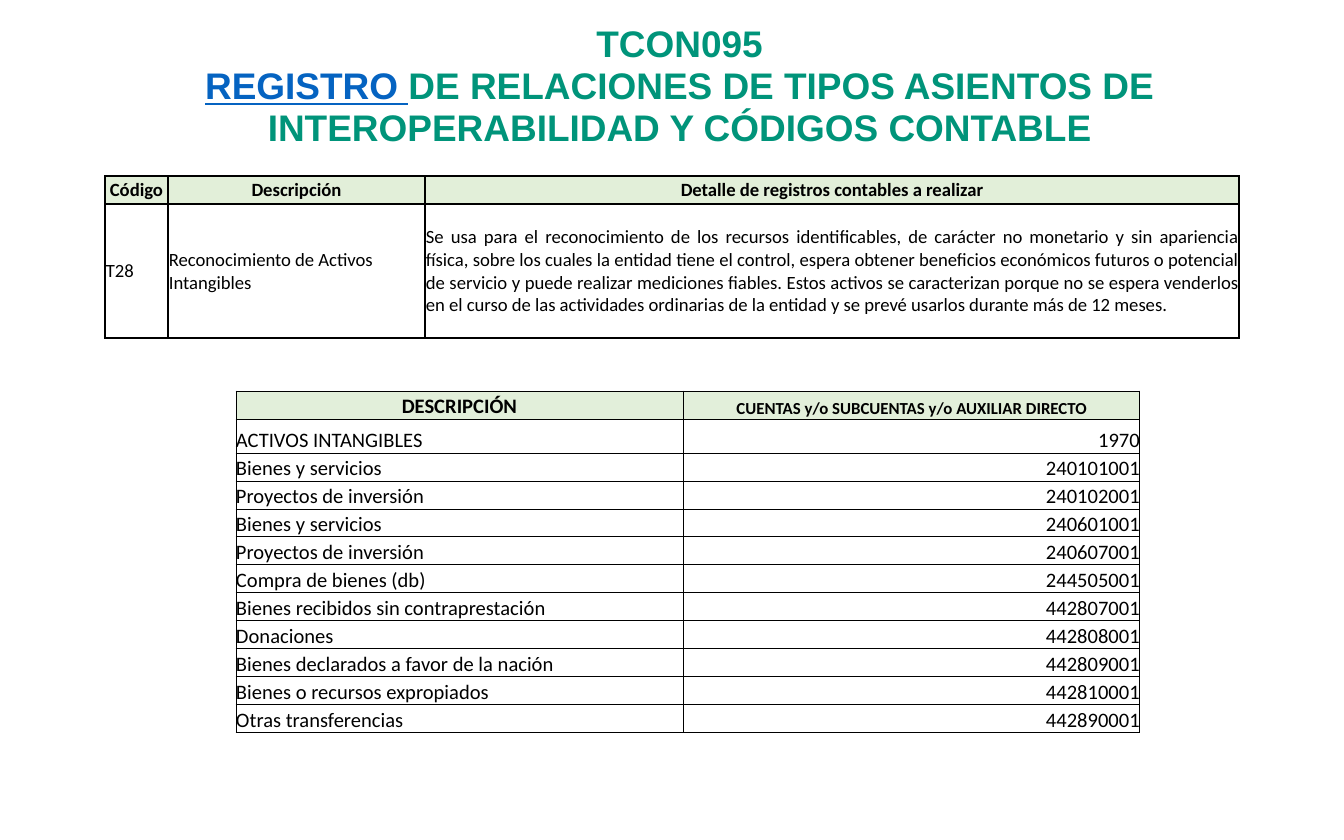
from dataclasses import dataclass

from lxml import etree
from pptx import Presentation
from pptx.dml.color import RGBColor
from pptx.enum.text import MSO_ANCHOR, PP_ALIGN
from pptx.oxml.ns import qn
from pptx.util import Emu, Pt

PX = 914400 / 134.4
LEFT, CENTER, RIGHT, JUSTIFY = PP_ALIGN.LEFT, PP_ALIGN.CENTER, PP_ALIGN.RIGHT, PP_ALIGN.JUSTIFY
MIDDLE, BOTTOM = MSO_ANCHOR.MIDDLE, MSO_ANCHOR.BOTTOM
GREEN, LINK, BLACK = "00947A", "0563C1", "000000"


@dataclass(frozen=True)
class TableSpec:
    left: int
    top: int
    cols: list[int]
    rows: list[int]
    cells: list[tuple[str, ...]]
    aligns: list[PP_ALIGN]
    header_sizes: list[int]
    body_size: int
    header_fill: str
    anchor: MSO_ANCHOR
    inset: int
    border: float


ENTRY_TYPES = TableSpec(
    left=105, top=176, cols=[63, 257, 814], rows=[28, 134],
    cells=[
        ("Código", "Descripción", "Detalle de registros contables a realizar"),
        ("T28", "Reconocimiento de Activos Intangibles",
         "Se usa para el reconocimiento de los recursos identificables, de carácter no monetario "
         "y sin apariencia física, sobre los cuales la entidad tiene el control, espera obtener "
         "beneficios económicos futuros o potencial de servicio y puede realizar mediciones "
         "fiables. Estos activos se caracterizan porque no se espera venderlos en el curso de "
         "las actividades ordinarias de la entidad y se prevé usarlos durante más de 12 meses."),
    ],
    aligns=[LEFT, LEFT, JUSTIFY], header_sizes=[10, 10, 10], body_size=10,
    header_fill="E2EFD9", anchor=MIDDLE, inset=1, border=1,
)

ACCOUNTS = TableSpec(
    left=236, top=391, cols=[447, 457], rows=[28, 34] + [28] * 10,
    cells=[
        ("DESCRIPCIÓN", "CUENTAS y/o SUBCUENTAS y/o AUXILIAR DIRECTO"),
        ("ACTIVOS INTANGIBLES", "1970"),
        ("Bienes y servicios", "240101001"),
        ("Proyectos de inversión", "240102001"),
        ("Bienes y servicios", "240601001"),
        ("Proyectos de inversión", "240607001"),
        ("Compra de bienes (db)", "244505001"),
        ("Bienes recibidos sin contraprestación", "442807001"),
        ("Donaciones", "442808001"),
        ("Bienes declarados a favor de la nación", "442809001"),
        ("Bienes o recursos expropiados", "442810001"),
        ("Otras transferencias", "442890001"),
    ],
    aligns=[LEFT, RIGHT], header_sizes=[11, 9], body_size=11,
    header_fill="E2EFDA", anchor=BOTTOM, inset=0, border=0.5,
)


def px(n: int) -> Emu:
    return Emu(round(n * PX))


def rgb(value: str) -> RGBColor:
    return RGBColor.from_string(value)


def set_font(font, name: str, size: float, bold: bool) -> None:
    font.name, font.size, font.bold = name, Pt(size), bold


def set_borders(cell, width: float) -> None:
    tc_pr = cell._tc.get_or_add_tcPr()
    for i, side in enumerate(("a:lnL", "a:lnR", "a:lnT", "a:lnB")):
        ln = etree.Element(qn(side), w=str(Pt(width)))
        fill = etree.SubElement(ln, qn("a:solidFill"))
        etree.SubElement(fill, qn("a:srgbClr"), val=BLACK)
        tc_pr.insert(i, ln)


def draw_title(slide) -> None:
    s = slide.shapes.add_textbox(px(15), px(35), px(1329), px(144))
    tf = s.text_frame
    tf.word_wrap = True
    tf.vertical_anchor = MIDDLE
    tf.margin_top, tf.margin_bottom = 0, px(40)
    lines = [
        [("TCON095", GREEN)],
        [("REGISTRO ", LINK),
         ("DE RELACIONES DE TIPOS ASIENTOS DE INTEROPERABILIDAD Y CÓDIGOS CONTABLE", GREEN)],
    ]
    for i, runs in enumerate(lines):
        p = tf.add_paragraph() if i else tf.paragraphs[0]
        p.alignment, p.line_spacing = CENTER, 0.95
        set_font(p.font, "Arial", 19.8, True)
        for text, color in runs:
            r = p.add_run()
            r.text = text
            r.font.color.rgb = rgb(color)
            r.font.underline = color == LINK


def draw_table(slide, spec: TableSpec) -> None:
    table = slide.shapes.add_table(
        len(spec.rows), len(spec.cols), px(spec.left), px(spec.top),
        px(sum(spec.cols)), px(sum(spec.rows))).table
    table.first_row = table.horz_banding = False
    for column, width in zip(table.columns, spec.cols):
        column.width = px(width)
    for row, height in zip(table.rows, spec.rows):
        row.height = px(height)
    for i, texts in enumerate(spec.cells):
        header = i == 0
        for j, text in enumerate(texts):
            cell = table.cell(i, j)
            cell.vertical_anchor = spec.anchor
            cell.margin_left = cell.margin_right = cell.margin_top = px(spec.inset)
            cell.margin_bottom = 0
            if header:
                cell.fill.solid()
                cell.fill.fore_color.rgb = rgb(spec.header_fill)
            else:
                cell.fill.background()
            set_borders(cell, spec.border)
            p = cell.text_frame.paragraphs[0]
            p.text = text
            p.alignment = CENTER if header else spec.aligns[j]
            set_font(p.font, "Calibri", spec.header_sizes[j] if header else spec.body_size, header)
            p.font.color.rgb = rgb(BLACK)


def main() -> None:
    prs = Presentation()
    prs.slide_width, prs.slide_height = px(1344), px(840)
    slide = prs.slides.add_slide(prs.slide_layouts[6])
    draw_title(slide)
    for spec in (ENTRY_TYPES, ACCOUNTS):
        draw_table(slide, spec)
    prs.save("out.pptx")


if __name__ == "__main__":
    main()
